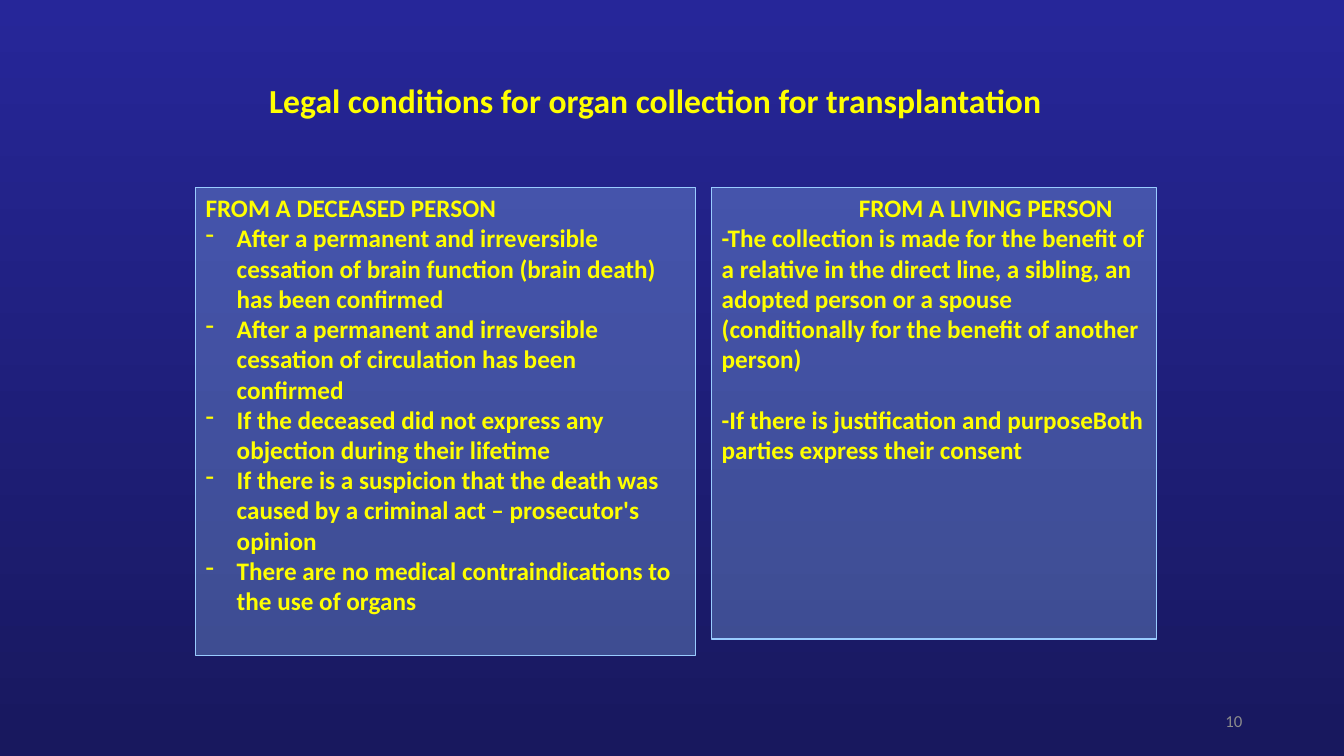
"""Build the slide on legal conditions for organ collection."""
from lxml import etree
from pptx import Presentation
from pptx import util as u
from pptx.dml import color
from pptx.enum import shapes, text
from pptx.oxml import ns

YELLOW, PALE_BLUE, GREY = "FFFF00", "99CCFF", "8C8C8C"
BACKGROUND = ["262699", "18185E"]
PANEL_OPACITY = 29
PANEL_TOP = 1.86
HANGING = {"marL": 0.31, "indent": -0.31}
HEADING = {"size": 18, "bold": True, "color": YELLOW}

TITLE = {"box": (2.57, 0.29, 8.99, 1.45),
         "text": "Legal conditions for organ collection for transplantation",
         "font": {"size": 24, "bold": True, "color": YELLOW},
         "format": {"line_spacing": 0.9}}
PAGE_NUMBER = {"box": (9.42, 6.95, 3, 0.4), "text": "10",
               "font": {"size": 12, "bold": False, "color": GREY},
               "format": {"alignment": text.PP_ALIGN.RIGHT}}

PANELS = [
    {"left": 1.94, "width": 4.96, "height": 4.64, "bullet": "-",
     "heading": "FROM A DECEASED PERSON", "heading_indent": 0,
     "conditions": [
         "After a permanent and irreversible cessation of brain function (brain death) has been confirmed",
         "After a permanent and irreversible cessation of circulation has been confirmed",
         "If the deceased did not express any objection during their lifetime",
         "If there is a suspicion that the death was caused by a criminal act – prosecutor's opinion",
         "There are no medical contraindications to the use of organs"],
     "gap": 0},
    {"left": 7.06, "width": 4.41, "height": 4.48, "bullet": None,
     "heading": "FROM A LIVING PERSON", "heading_indent": 1.36,
     "conditions": [
         "-The collection is made for the benefit of a relative in the direct line, a sibling, "
         "an adopted person or a spouse (conditionally for the benefit of another person)",
         "-If there is justification and purposeBoth parties express their consent"],
     "gap": 21.8},
]


def rgb(value):
    return color.RGBColor.from_string(value)


def set_attributes(target, values):
    for name, value in values.items():
        setattr(target, name, value)


def write(paragraph, words, font, **formats):
    run = paragraph.add_run()
    run.text = words
    set_attributes(run.font, {"name": "Calibri", "size": u.Pt(font["size"]), "bold": font["bold"]})
    run.font.color.rgb = rgb(font["color"])
    set_attributes(paragraph, formats)


def indent(paragraph, lengths, bullet=None):
    properties = paragraph._p.get_or_add_pPr()
    for name, length in lengths.items():
        properties.set(name, str(u.Inches(length)))
    if bullet:
        etree.SubElement(properties, ns.qn("a:buChar")).set("char", bullet)


def add_label(slide, label):
    frame = slide.shapes.add_textbox(*map(u.Inches, label["box"])).text_frame
    set_attributes(frame, {"word_wrap": True, "vertical_anchor": text.MSO_ANCHOR.MIDDLE})
    write(frame.paragraphs[0], label["text"], label["font"], **label["format"])


def add_panel(slide, panel):
    box = (panel["left"], PANEL_TOP, panel["width"], panel["height"])
    shape = slide.shapes.add_shape(shapes.MSO_SHAPE.RECTANGLE, *map(u.Inches, box))
    shape.shadow.inherit = False
    shape.fill.solid()
    shape.fill.fore_color.rgb = shape.line.color.rgb = rgb(PALE_BLUE)
    shape.line.width = u.Pt(0.75)
    fill_color = shape.fill._xPr.find(ns.qn("a:solidFill"))[0]
    etree.SubElement(fill_color, ns.qn("a:alpha")).set("val", str(PANEL_OPACITY * 1000))

    frame = shape.text_frame
    set_attributes(frame, {"word_wrap": True, "vertical_anchor": text.MSO_ANCHOR.TOP})
    left = text.PP_ALIGN.LEFT
    heading = frame.paragraphs[0]
    write(heading, panel["heading"], HEADING, alignment=left)
    indent(heading, {"marL": 0, "indent": panel["heading_indent"]})
    for index, condition in enumerate(panel["conditions"]):
        paragraph = frame.add_paragraph()
        gap = u.Pt(panel["gap"] if index else 0)
        write(paragraph, condition, HEADING, alignment=left, space_before=gap)
        if panel["bullet"]:
            indent(paragraph, HANGING, panel["bullet"])


def main():
    presentation = Presentation()
    set_attributes(presentation, {"slide_width": u.Inches(13.33), "slide_height": u.Inches(7.5)})
    slide = presentation.slides.add_slide(presentation.slide_layouts[6])
    fill = slide.background.fill
    fill.gradient()
    fill.gradient_angle = 270
    for stop, value in zip(fill.gradient_stops, BACKGROUND):
        stop.color.rgb = rgb(value)
    add_label(slide, TITLE)
    for panel in PANELS:
        add_panel(slide, panel)
    add_label(slide, PAGE_NUMBER)
    presentation.save("out.pptx")


if __name__ == "__main__":
    main()
